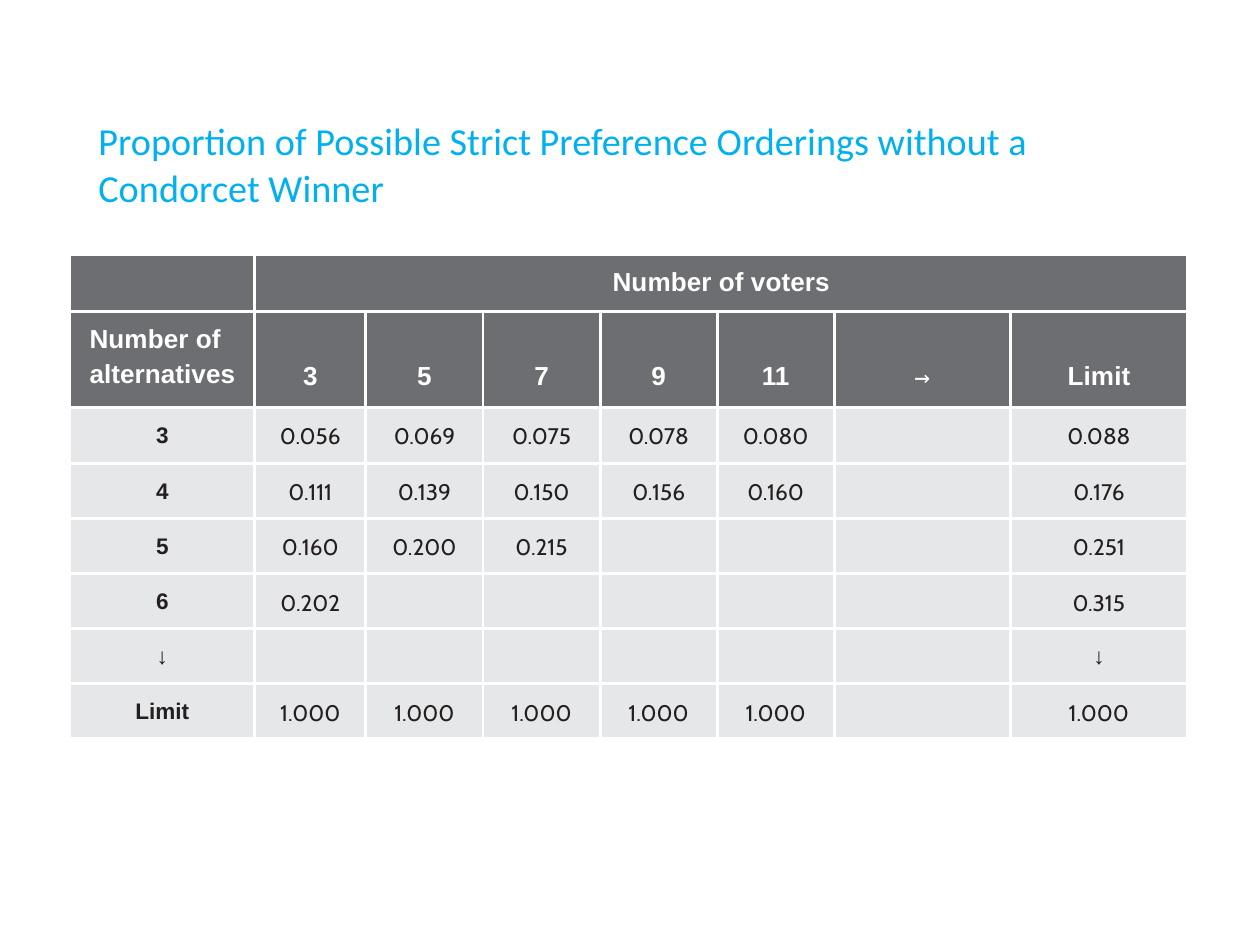
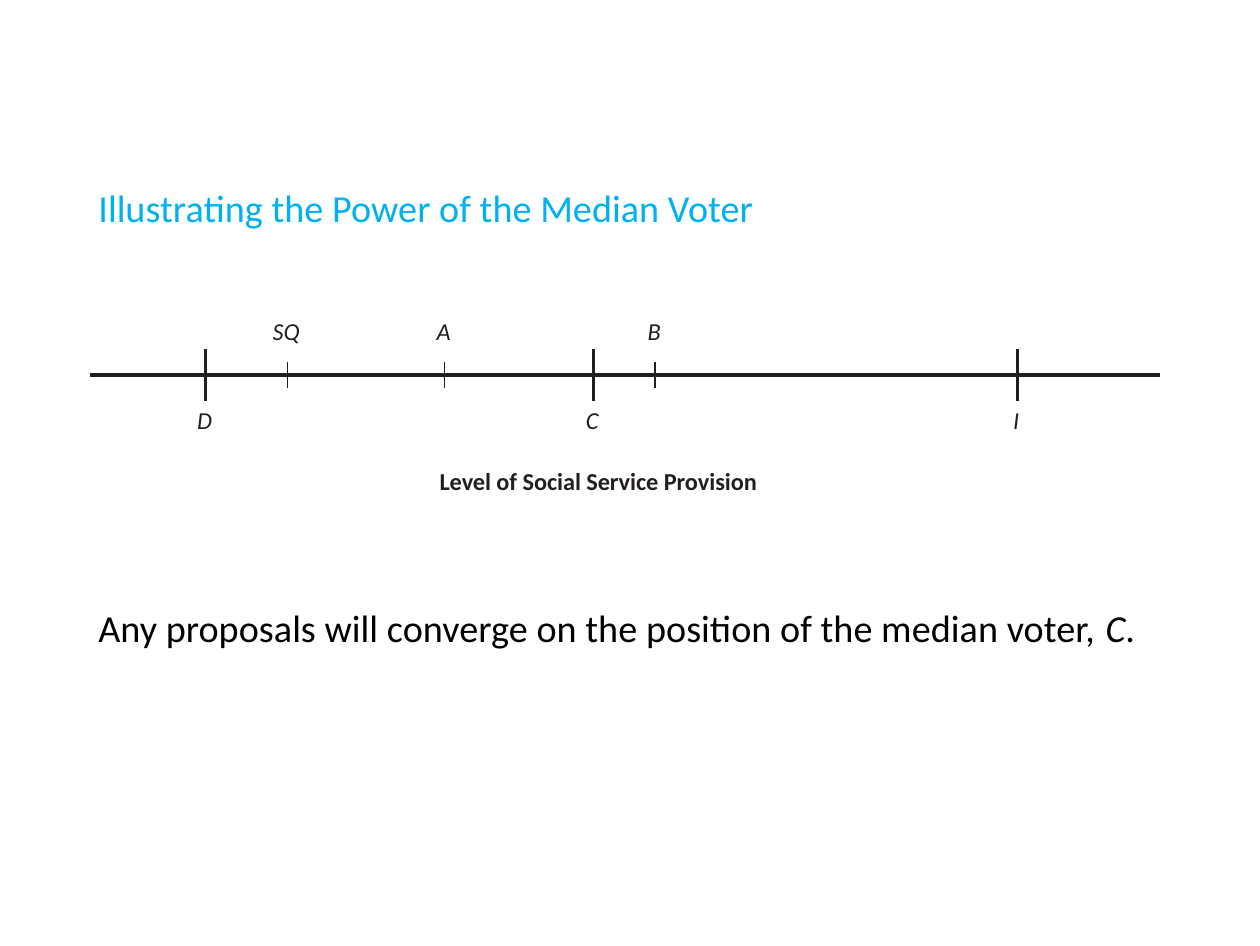
from dataclasses import dataclass
from lxml.etree import SubElement
from pptx import Presentation
from pptx.dml.color import RGBColor
from pptx.enum.shapes import MSO_CONNECTOR
from pptx.enum.text import MSO_ANCHOR, PP_ALIGN
from pptx.oxml.ns import qn
from pptx.util import Cm, Pt


@dataclass(frozen=True)
class Theme:
    title: str = "00B0F0"
    text: str = "000000"
    ink: str = "231F20"
    white: str = "FFFFFF"
    head: str = "6D6E71"
    body: str = "E6E7E8"
    face: str = "Calibri"
    bold: str = "Arial"
    digit: str = "Cabin"
    mono: str = "DejaVu Sans Mono"
    large: float = 11
    label: float = 7
    top: float = 7.5
    cell: float = 6.5
    thick: float = 0.9
    thin: float = 0.45


THEME = Theme()
LEFT = 1.0
COLS = [1.88, 1.13] + [1.19] * 4 + [1.79, 1.8]
ROWS = [0.58, 0.97, 0.57] + [0.56] * 5
VOTERS = [
    ["", "Number of voters"],
    ["Number of alternatives", "3", "5", "7", "9", "11", "→", "Limit"],
    ["3", "0.056", "0.069", "0.075", "0.078", "0.080", "", "0.088"],
    ["4", "0.111", "0.139", "0.150", "0.156", "0.160", "", "0.176"],
    ["5", "0.160", "0.200", "0.215", "", "", "", "0.251"],
    ["6", "0.202", "", "", "", "", "", "0.315"],
    ["↓", "", "", "", "", "", "", "↓"],
    ["Limit"] + ["1.000"] * 5 + ["", "1.000"],
]
POINTS = [("D", 1.18, True), ("SQ", 2.01, False), ("A", 3.61, False),
          ("C", 5.12, True), ("B", 5.75, False), ("I", 9.43, True)]


def style(para, size, color, face=THEME.face, bold=False, slant=False,
          align=PP_ALIGN.LEFT):
    font = para.font
    font.name, font.size = face, Pt(size)
    font.bold, font.italic = bold, slant
    font.color.rgb = RGBColor.from_string(color)
    para.alignment = align


def inset(part, top=0, left=0):
    part.margin_top, part.margin_left = Cm(top), Cm(left)
    part.margin_right = part.margin_bottom = 0
    part.vertical_anchor = MSO_ANCHOR.TOP


def add_title(deck, text, box, pitch=1.0):
    slide = deck.slides.add_slide(deck.slide_layouts[5])
    shape = slide.shapes.title
    shape.left, shape.top, shape.width, shape.height = map(Cm, box)
    frame = shape.text_frame
    frame.text = text
    frame.word_wrap = True
    inset(frame)
    para = frame.paragraphs[0]
    para.line_spacing = pitch
    style(para, THEME.large, THEME.title)
    return slide


def add_text(slide, text, box, size, color, **look):
    frame = slide.shapes.add_textbox(*map(Cm, box)).text_frame
    frame.word_wrap = True
    inset(frame)
    para = frame.paragraphs[0]
    para.text = text
    style(para, size, color, **look)
    return para


def add_line(slide, start, end, width):
    line = slide.shapes.add_connector(
        MSO_CONNECTOR.STRAIGHT, *map(Cm, start + end))
    line.line.width = Pt(width)
    line.line.color.rgb = RGBColor.from_string(THEME.ink)
    SubElement(line._element.spPr, qn("a:effectLst"))


def add_edges(cell):
    props = cell._tc.get_or_add_tcPr()
    for side in ("lnL", "lnR", "lnT", "lnB"):
        edge = SubElement(props, qn(f"a:{side}"), w=str(Pt(1)))
        fill = SubElement(edge, qn("a:solidFill"))
        SubElement(fill, qn("a:srgbClr"), val=THEME.white)


def fill_cell(cell, text, row, col):
    head = row < 2
    size = THEME.top if head else THEME.cell
    add_edges(cell)
    cell.fill.solid()
    cell.fill.fore_color.rgb = RGBColor.from_string(
        THEME.head if head else THEME.body)
    para = cell.text_frame.paragraphs[0]
    side = row == 1 and col == 0
    if side:
        inset(cell, 0.07, 0.2)
        para.line_spacing = 1.2
    else:
        inset(cell, {0: 0.13, 1: 0.51}.get(row, 0.16))
    if not text:
        para._p.get_or_add_endParaRPr().set("sz", str(int(size * 100)))
        return
    para.text = text
    face = THEME.mono if text == "→" else THEME.bold
    if "." in text:
        face = THEME.digit
    style(para, size, THEME.white if head else THEME.ink, face,
          bold=face == THEME.bold,
          align=PP_ALIGN.LEFT if side else PP_ALIGN.CENTER)


def add_grid(slide, left, top):
    grid = slide.shapes.add_table(
        len(ROWS), len(COLS), Cm(left), Cm(top),
        Cm(sum(COLS)), Cm(sum(ROWS))).table
    grid.first_row = grid.horz_banding = False
    for col, width in zip(grid.columns, COLS):
        col.width = Cm(width)
    for row, height in zip(grid.rows, ROWS):
        row.height = Cm(height)
    for row, texts in enumerate(VOTERS):
        for col in range(len(COLS)):
            text = texts[col] if col < len(texts) else ""
            fill_cell(grid.cell(row, col), text, row, col)
    grid.cell(0, 1).merge(grid.cell(0, len(COLS) - 1))


def add_axis(slide, left, top, width):
    mid = top + 0.6
    add_line(slide, (left, mid), (left + width, mid), THEME.thick)
    for name, shift, ideal in POINTS:
        spot = left + shift
        half = 0.26 if ideal else 0.13
        add_line(slide, (spot, mid - half), (spot, mid + half),
                 THEME.thick if ideal else THEME.thin)
        add_text(slide, name, (spot - 0.31, mid + (0.31 if ideal else -0.6),
                               0.6, 0.3),
                 THEME.label, THEME.ink, slant=True, align=PP_ALIGN.CENTER)
    add_text(slide, "Level of Social Service Provision",
             (left + 3.17, top + 1.53, 4, 0.33),
             THEME.label, THEME.ink, bold=True, align=PP_ALIGN.CENTER)


def table_slide(deck):
    slide = add_title(
        deck, "Proportion of Possible Strict Preference Orderings "
        "without a Condorcet Winner", (LEFT, 1.18, 9.78, 0.97), 1.03)
    add_grid(slide, 0.71, 2.59)


def median_slide(deck):
    slide = add_title(deck, "Illustrating the Power of the Median Voter",
                      (LEFT, 1.87, 7.5, 0.5))
    add_axis(slide, 0.91, 3.21, 10.88)
    para = add_text(
        slide, "Any proposals will converge on the position "
        "of the median voter, ", (LEFT, 6.14, 10.9, 0.5),
        THEME.large, THEME.text)
    for text, slant in (("C", True), (".", False)):
        run = para.add_run()
        run.text = text
        run.font.italic = slant


def main():
    deck = Presentation()
    deck.slide_width, deck.slide_height = Pt(363), Pt(272.5)
    table_slide(deck)
    median_slide(deck)
    deck.save("out.pptx")


if __name__ == "__main__":
    main()
